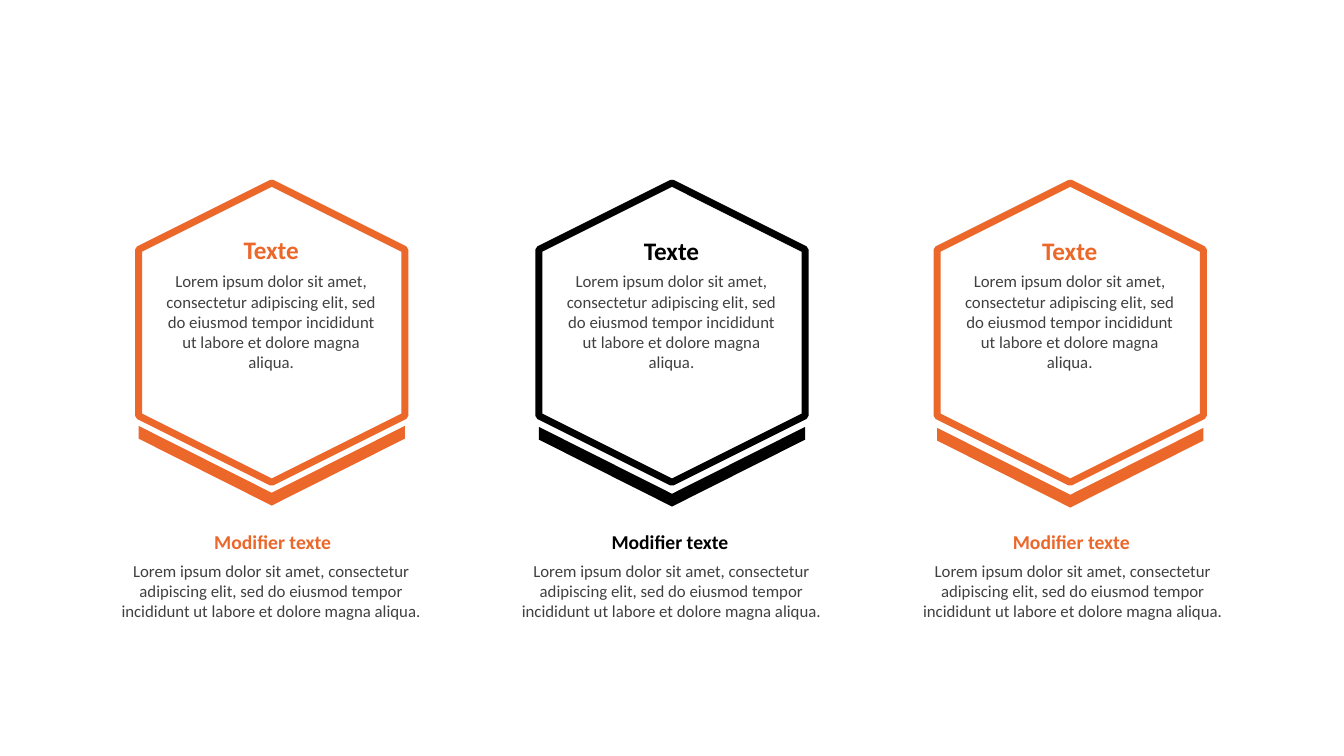
from pptx import Presentation
from pptx import util as u
from pptx.dml.color import RGBColor
from pptx.enum import shapes, text

ORANGE = RGBColor(0xEC, 0x67, 0x2A)
BLACK = RGBColor(0, 0, 0)
GREY = RGBColor(0x40, 0x40, 0x40)
PX = 9144

LOREM = ("Lorem ipsum dolor sit amet, consectetur adipiscing elit, sed do eiusmod "
         "tempor incididunt ut labore et dolore magna aliqua.")
HEAD = "Texte"
CAPTION = "Modifier texte"

COLUMNS = [
    {"color": ORANGE, "hexagon": 121, "head": 228, "chevron": 330, "caption": 98, "body": 95},
    {"color": BLACK, "hexagon": 518, "head": 229, "chevron": 331, "caption": 492, "body": 492},
    {"color": ORANGE, "hexagon": 913, "head": 229, "chevron": 332, "caption": 890, "body": 890},
]

deck = Presentation()
deck.slide_width = 1333 * PX
deck.slide_height = 750 * PX
slide = deck.slides.add_slide(deck.slide_layouts[6])


def add_label(words, left, top, width, height, size, color, bold=False):
    box = slide.shapes.add_textbox(left * PX, top * PX, width * PX, height * PX)
    frame = box.text_frame
    frame.word_wrap = True
    frame.auto_size = text.MSO_AUTO_SIZE.SHAPE_TO_FIT_TEXT
    frame.text = words
    line = frame.paragraphs[0]
    line.alignment = text.PP_ALIGN.CENTER
    font = line.runs[0].font
    font.name = "Calibri"
    font.size = u.Pt(size)
    font.bold = bold
    font.color.rgb = color


def add_turned(kind, left, top, width, height, angle):
    shape = slide.shapes.add_shape(kind, left * PX, top * PX, width * PX, height * PX)
    shape.rotation = angle
    shape.shadow.inherit = False
    return shape


for column in COLUMNS:
    color = column["color"]
    left = column["hexagon"]

    hexagon = add_turned(shapes.MSO_SHAPE.HEXAGON, left, 198, 297, 264, 270)
    hexagon.fill.background()
    hexagon.line.color.rgb = color
    hexagon.line.width = u.Pt(5)

    chevron = add_turned(shapes.MSO_SHAPE.CHEVRON, left + 109, column["chevron"], 79, 264, 90)
    chevron.adjustments[0] = 0.84
    chevron.fill.solid()
    chevron.fill.fore_color.rgb = color
    chevron.line.fill.background()

    add_label(LOREM, left + 34, 264, 228, 111, 12, GREY)
    add_label(HEAD, left + 34, column["head"], 228, 40, 18, color, True)
    add_label(LOREM, column["body"], 551, 348, 71, 12, GREY)
    add_label(CAPTION, column["caption"], 521, 345, 34, 14, color, True)

deck.save("out.pptx")
